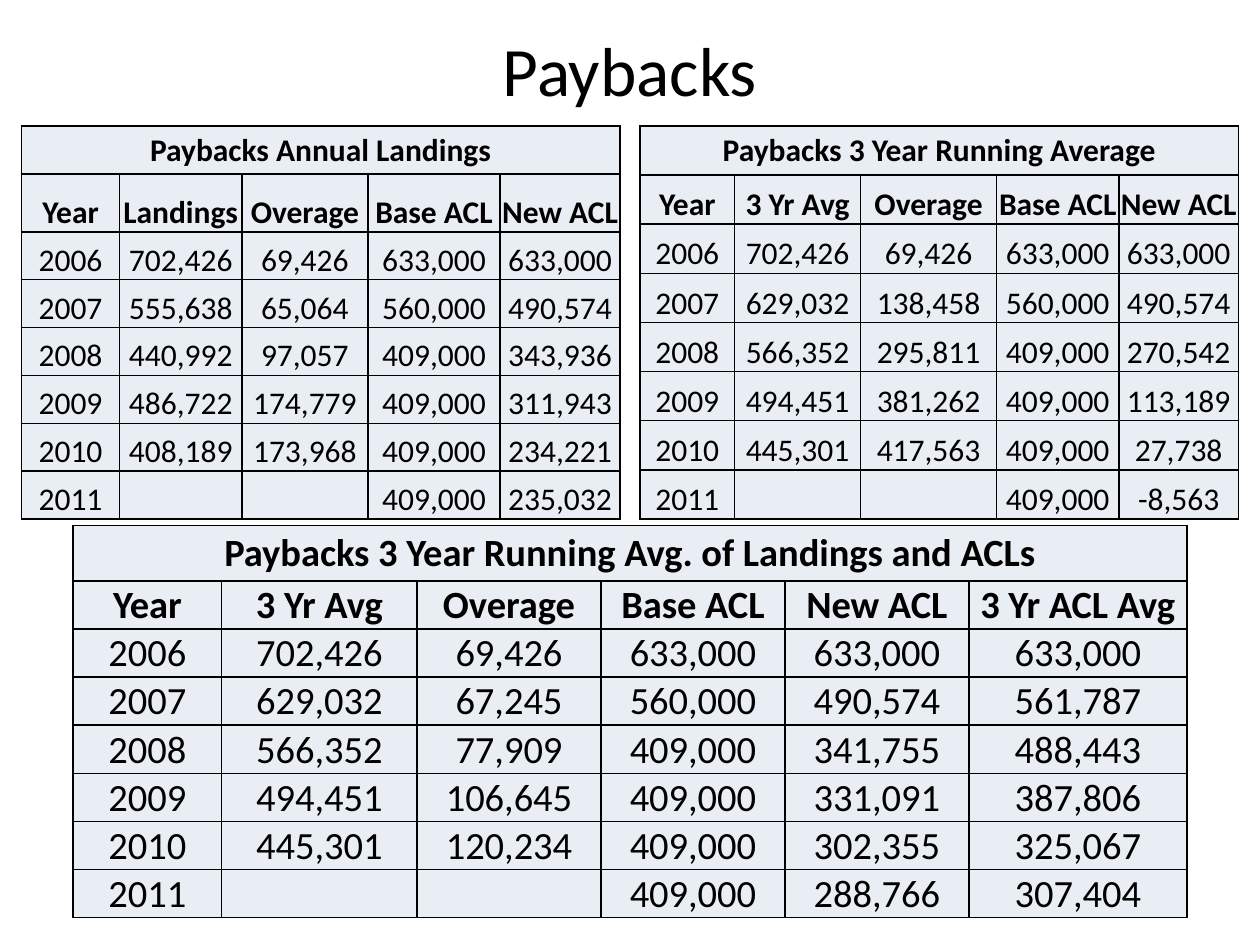
"""Build the Paybacks slide: three tables comparing payback methods."""
from dataclasses import dataclass

from lxml import etree
from pptx import Presentation
from pptx.dml.color import RGBColor
from pptx.enum.text import MSO_ANCHOR, MSO_AUTO_SIZE, PP_ALIGN
from pptx.oxml.ns import qn
from pptx.util import Inches, Pt

CENTER = PP_ALIGN.CENTER
MIDDLE, BOTTOM = MSO_ANCHOR.MIDDLE, MSO_ANCHOR.BOTTOM
NO_AUTOFIT = MSO_AUTO_SIZE.NONE


@dataclass(frozen=True)
class Theme:
    font: str = "Calibri"
    ink: str = "000000"
    cell: str = "E9EDF4"
    title: float = 39.6
    small: float = 18
    large: float = 22
    border: float = 1
    margin: float = 0.01


THEME = Theme()
TITLE = "Paybacks"
YEARS = ["2006", "2007", "2008", "2009", "2010", "2011"]
BASE_ACL = ["633,000", "560,000"] + ["409,000"] * 4
RUNNING_AVG = ["702,426", "629,032", "566,352", "494,451", "445,301", ""]

TABLES = [
    {
        "title": "Paybacks 3 Year Running Average",
        "left": 5.08, "top": 1, "size": THEME.small,
        "widths": [0.75, 1, 1.08, 0.97, 0.95],
        "heights": [0.39] * 8,
        "columns": {
            "Year": YEARS,
            "3 Yr Avg": RUNNING_AVG,
            "Overage": ["69,426", "138,458", "295,811", "381,262", "417,563", ""],
            "Base ACL": BASE_ACL,
            "New ACL": ["633,000", "490,574", "270,542", "113,189", "27,738", "-8,563"],
        },
    },
    {
        "title": "Paybacks 3 Year Running Avg. of Landings and ACLs",
        "left": 0.58, "top": 4.17, "size": THEME.large,
        "widths": [1.18, 1.55, 1.46, 1.46, 1.46, 1.73],
        "heights": [0.44] + [0.36] * 7,
        "columns": {
            "Year": YEARS,
            "3 Yr Avg": RUNNING_AVG,
            "Overage": ["69,426", "67,245", "77,909", "106,645", "120,234", ""],
            "Base ACL": BASE_ACL,
            "New ACL": ["633,000", "490,574", "341,755", "331,091", "302,355", "288,766"],
            "3 Yr ACL Avg": ["633,000", "561,787", "488,443", "387,806", "325,067", "307,404"],
        },
    },
    {
        "title": "Paybacks Annual Landings",
        "left": 0.17, "top": 1, "size": THEME.small,
        "widths": [0.78, 0.97, 1, 1.05, 0.95],
        "heights": [0.38, 0.46] + [0.38] * 6,
        "columns": {
            "Year": YEARS,
            "Landings": ["702,426", "555,638", "440,992", "486,722", "408,189", ""],
            "Overage": ["69,426", "65,064", "97,057", "174,779", "173,968", ""],
            "Base ACL": BASE_ACL,
            "New ACL": ["633,000", "490,574", "343,936", "311,943", "234,221", "235,032"],
        },
    },
]


def set_text(tf, text, size, bold=False):
    tf.text = text
    p = tf.paragraphs[0]
    p.alignment = CENTER
    for r in p.runs:
        r.font.name = THEME.font
        r.font.size = Pt(size)
        r.font.bold = bold
        r.font.color.rgb = RGBColor.from_string(THEME.ink)


def set_borders(cell):
    tc_pr = cell._tc.get_or_add_tcPr()
    for side in ("a:lnL", "a:lnR", "a:lnT", "a:lnB"):
        line = etree.SubElement(tc_pr, qn(side), w=str(Pt(THEME.border)))
        fill = etree.SubElement(line, qn("a:solidFill"))
        etree.SubElement(fill, qn("a:srgbClr"), val=THEME.ink)


def style_cell(cell, anchor):
    set_borders(cell)
    cell.fill.solid()
    cell.fill.fore_color.rgb = RGBColor.from_string(THEME.cell)
    cell.margin_left = cell.margin_right = cell.margin_top = Inches(THEME.margin)
    cell.margin_bottom = 0
    cell.vertical_anchor = anchor


def add_payback_table(s, data):
    widths, heights, columns = data["widths"], data["heights"], data["columns"]
    blanks = [""] * (len(widths) - 1)
    rows = [[data["title"], *blanks], list(columns), *zip(*columns.values())]
    table = s.shapes.add_table(
        len(rows), len(widths), Inches(data["left"]), Inches(data["top"]),
        Inches(sum(widths)), Inches(sum(heights))).table
    for column, width in zip(table.columns, widths):
        column.width = Inches(width)
    for row, height in zip(table.rows, heights):
        row.height = Inches(height)
    for i, values in enumerate(rows):
        for j, value in enumerate(values):
            cell = table.cell(i, j)
            style_cell(cell, BOTTOM if i else MIDDLE)
            set_text(cell.text_frame, value, data["size"], bold=i < 2)
    table.cell(0, 0).merge(table.cell(0, len(widths) - 1))


def main():
    prs = Presentation()
    prs.slide_width, prs.slide_height = Inches(10), Inches(7.5)
    s = prs.slides.add_slide(prs.slide_layouts[5])
    title = s.shapes.title
    title.left, title.top = Inches(0.5), Inches(0.17)
    title.width, title.height = Inches(9), Inches(0.75)
    title.text_frame.auto_size = NO_AUTOFIT
    title.text_frame.vertical_anchor = MIDDLE
    set_text(title.text_frame, TITLE, THEME.title)
    for data in TABLES:
        add_payback_table(s, data)
    prs.save("out.pptx")


if __name__ == "__main__":
    main()
